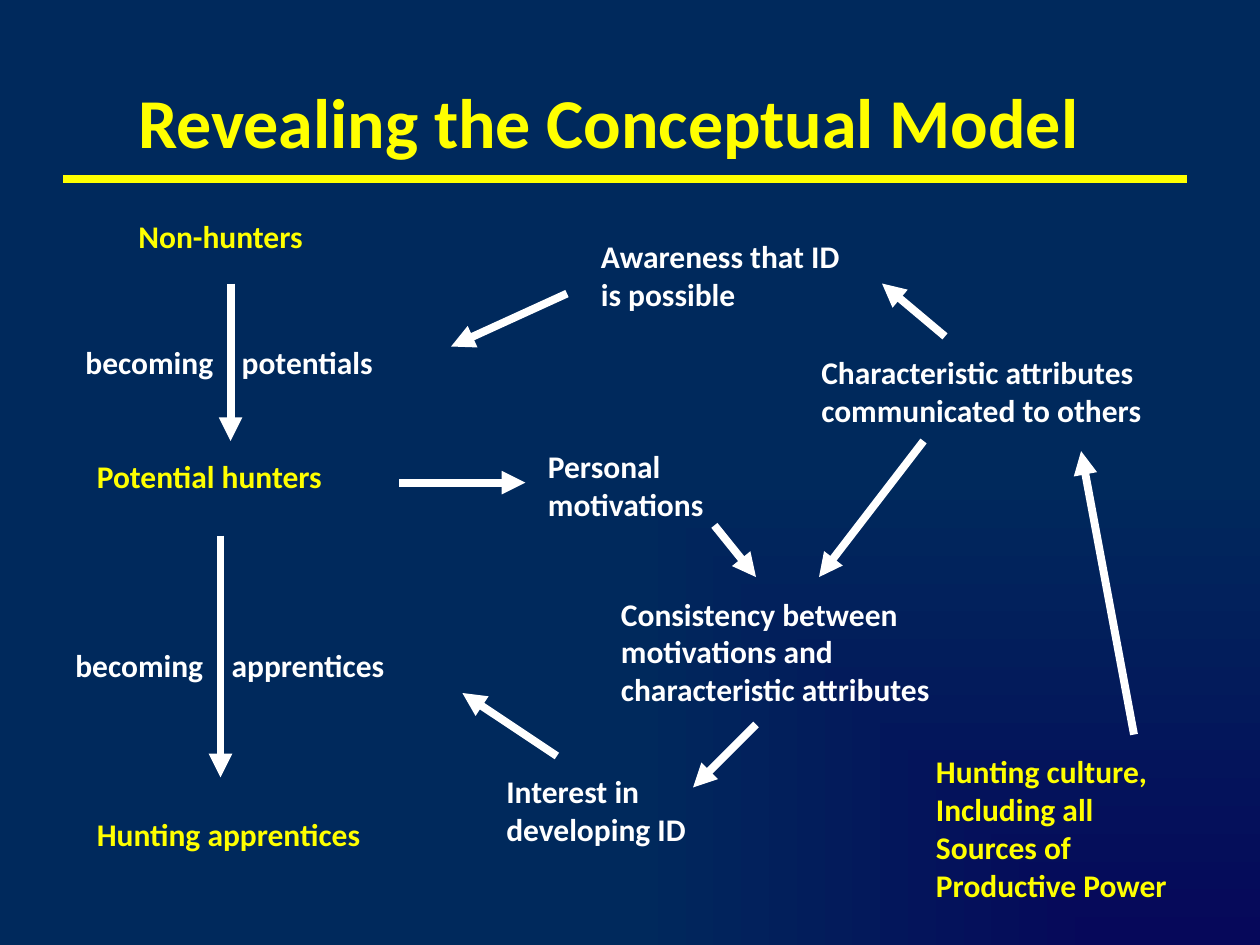
from lxml import etree
from pptx import Presentation
from pptx.dml.color import RGBColor
from pptx.enum import shapes, text
from pptx.oxml.ns import qn
from pptx.util import Inches, Pt

YELLOW = "FFFF00"
WHITE = "FFFFFF"
NAVY = "00295C"
INDIGO = "06085A"

STAGES = [
    ("Non-hunters", (1, 1.67, 1.52, 0.4)),
    ("Potential hunters", (0.67, 3.58, 2, 0.4)),
    ("Hunting apprentices", (0.67, 6.42, 2.31, 0.4)),
]
TRANSITIONS = [
    ("becoming\tpotentials", (0.58, 2.67, 2.5, 0.4)),
    ("becoming\tapprentices", (0.5, 5.08, 2.67, 0.4)),
]
STAGE_ARROWS = [
    ((1.83, 2.25), (1.83, 3.5)),
    ((1.75, 4.25), (1.75, 6.17)),
]
CULTURE = ("Hunting culture,\nIncluding all\nSources of\nProductive Power", (7.33, 5.92, 2.05, 1.31))
INFLUENCES = [
    ("Awareness that ID\nis possible", (4.67, 1.83, 2.11, 0.71)),
    ("Characteristic attributes\ncommunicated to others", (6.42, 2.75, 2.76, 0.71)),
    ("Personal\nmotivations", (4.25, 3.5, 1.45, 0.71)),
    ("Consistency between\nmotivations and\ncharacteristic attributes", (4.83, 4.67, 3.18, 1)),
    ("Interest in\ndeveloping ID", (3.92, 6.08, 1.64, 0.71)),
]
INFLUENCE_ARROWS = [
    ((9, 5.83), (8.58, 3.58)),
    ((7.5, 2.67), (7, 2.25)),
    ((4.5, 2.33), (3.58, 2.75)),
    ((3.17, 3.83), (4.17, 3.83)),
    ((5.67, 4.17), (6, 4.58)),
    ((7.33, 3.5), (6.5, 4.58)),
    ((6, 5.75), (5.5, 6.25)),
    ((4.42, 6), (3.67, 5.5)),
]


def color(value):
    return RGBColor.from_string(value)


def add_text(slide, box, content, size=18, fill=WHITE, align=text.PP_ALIGN.LEFT,
             anchor=text.MSO_ANCHOR.TOP, wrap=False, tab=None):
    frame = slide.shapes.add_textbox(*map(Inches, box)).text_frame
    frame.word_wrap = wrap
    frame.vertical_anchor = anchor
    for index, line in enumerate(content.split("\n")):
        paragraph = frame.add_paragraph() if index else frame.paragraphs[0]
        paragraph.alignment = align
        if tab:
            stops = etree.SubElement(paragraph._p.get_or_add_pPr(), qn("a:tabLst"))
            etree.SubElement(stops, qn("a:tab"), pos=str(Inches(tab)), algn="l")
        run = paragraph.add_run()
        run.text = line
        run.font.name = "Calibri"
        run.font.size = Pt(size)
        run.font.bold = True
        run.font.color.rgb = color(fill)


def add_line(slide, start, end, stroke=WHITE, arrow=True):
    connector = slide.shapes.add_connector(
        shapes.MSO_CONNECTOR.STRAIGHT, *map(Inches, start + end))
    connector.line.color.rgb = color(stroke)
    connector.line.width = Pt(4.5)
    if arrow:
        etree.SubElement(connector.line._get_or_add_ln(), qn("a:tailEnd"), type="triangle")
    etree.SubElement(connector._element.spPr, qn("a:effectLst"))


def paint_background(slide):
    fill = slide.background.fill
    fill.gradient()
    for stop, value, position in zip(fill.gradient_stops, (INDIGO, NAVY), (0, 1)):
        stop.color.rgb = color(value)
        stop.position = position
    linear = next(slide._element.iter(qn("a:lin")))
    radial = etree.Element(qn("a:path"), path="rect")
    etree.SubElement(radial, qn("a:fillToRect"), l="100000", t="100000")
    linear.getparent().replace(linear, radial)


def add_heading(slide, box):
    left, top, width, height = box
    add_text(slide, box, "Revealing the Conceptual Model", size=40, fill=YELLOW,
             align=text.PP_ALIGN.CENTER, anchor=text.MSO_ANCHOR.MIDDLE, wrap=True)
    rule = top + height - 0.16
    add_line(slide, (left + 0.17, rule), (left + width + 0.09, rule), YELLOW, arrow=False)


def shift(origin, place):
    return (origin[0] + place[0], origin[1] + place[1]) + place[2:]


def add_stages(slide, origin):
    for content, box in STAGES:
        add_text(slide, shift(origin, box), content, fill=YELLOW)
    for content, box in TRANSITIONS:
        add_text(slide, shift(origin, box), content, tab=1.24)
    for start, end in STAGE_ARROWS:
        add_line(slide, shift(origin, start), shift(origin, end))


def add_influences(slide, origin):
    for content, box in INFLUENCES:
        add_text(slide, shift(origin, box), content)
    content, box = CULTURE
    add_text(slide, shift(origin, box), content, fill=YELLOW)
    for start, end in INFLUENCE_ARROWS:
        add_line(slide, shift(origin, start), shift(origin, end))


def main():
    presentation = Presentation()
    presentation.slide_width = Inches(10)
    presentation.slide_height = Inches(7.5)
    slide = presentation.slides.add_slide(presentation.slide_layouts[6])
    paint_background(slide)
    add_heading(slide, (0.33, 0.33, 9, 1.25))
    add_stages(slide, (0, 0))
    add_influences(slide, (0, 0))
    presentation.save("out.pptx")


if __name__ == "__main__":
    main()
